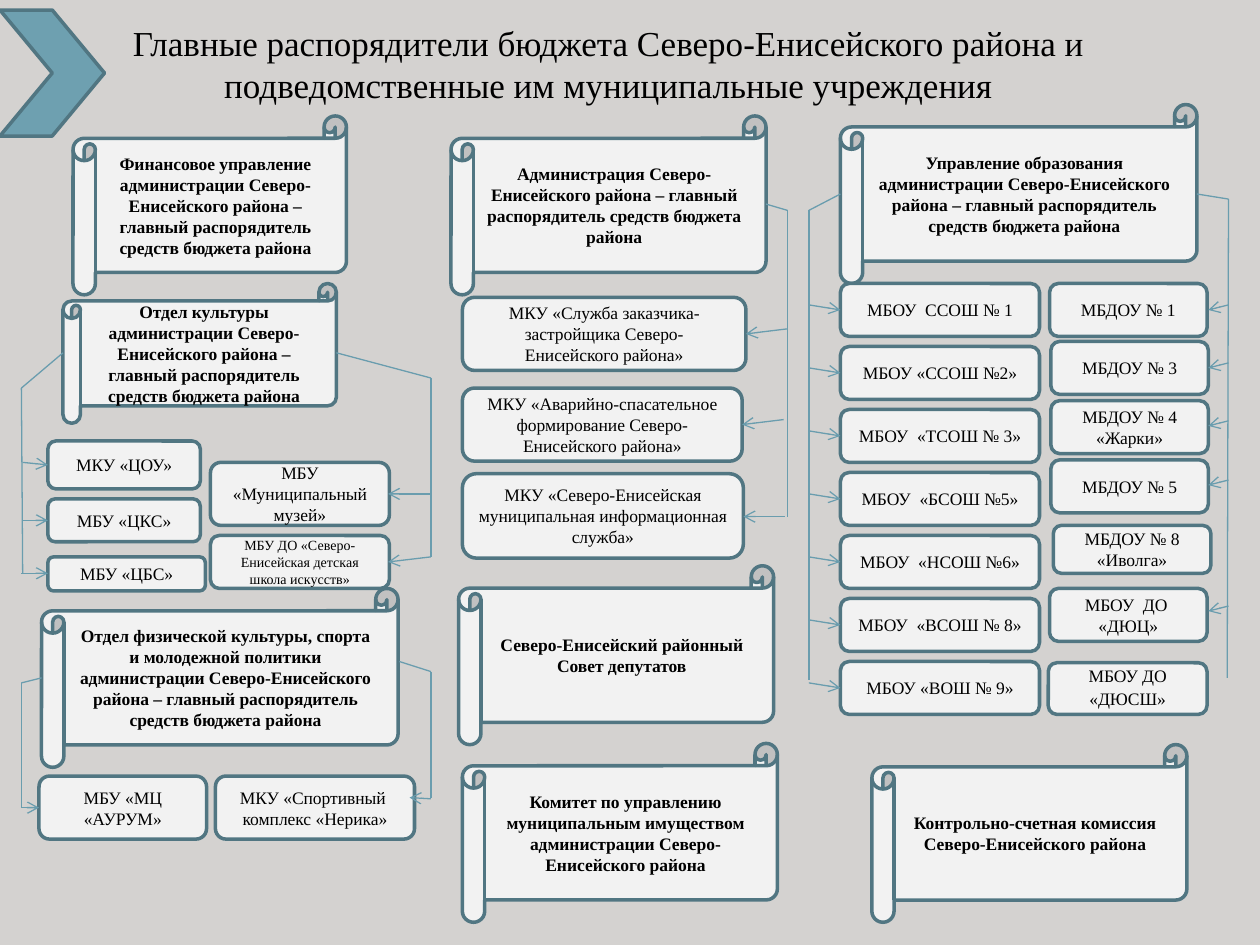
from itertools import pairwise

from lxml import etree
from pptx import Presentation, util as u
from pptx.dml import color
from pptx.enum import shapes, text
from pptx.oxml import ns

PX = 9144
FONT = "Times New Roman"
PAPER, BORDER, RAIL, ACCENT = "F2F2F2", "517682", "6A9DAE", "6EA0B0"
INK, BACKGROUND = "000000", "D4D2D0"
SCROLL = shapes.MSO_SHAPE.HORIZONTAL_SCROLL
ROUNDED = shapes.MSO_SHAPE.ROUNDED_RECTANGLE
CHEVRON = shapes.MSO_SHAPE.CHEVRON
CHIEF = " – главный распорядитель средств бюджета района"


def px(*lengths):
    return [u.Emu(length * PX) for length in lengths]


def rgb(value):
    return color.RGBColor.from_string(value)


def within(box, part):
    left, top, width, height = part
    return box[0] + left, box[1] + top, width, height


def write(shape, words, size, bold=False):
    frame = shape.text_frame
    frame.word_wrap = True
    frame.vertical_anchor = text.MSO_ANCHOR.MIDDLE
    frame.text = words
    for paragraph in frame.paragraphs:
        paragraph.alignment = text.PP_ALIGN.CENTER
        if len(frame.paragraphs) > 1:
            paragraph.line_spacing = 0.9
            paragraph.space_before = u.Pt(2)
        for run in paragraph.runs:
            run.font.name = FONT
            run.font.size = u.Pt(size)
            run.font.bold = bold
            run.font.color.rgb = rgb(INK)


def add_panel(slide, preset, box, fill=PAPER):
    shape = slide.shapes.add_shape(preset, *px(*box))
    shape.shadow.inherit = False
    shape.fill.solid()
    shape.fill.fore_color.rgb = rgb(fill)
    shape.line.color.rgb = rgb(BORDER)
    shape.line.width = u.Pt(2)
    return shape


def add_scroll(slide, box, words):
    write(add_panel(slide, SCROLL, box), words, 10, True)


def add_line(slide, start, end, arrow=False):
    line = slide.shapes.add_connector(shapes.MSO_CONNECTOR.STRAIGHT, *px(*start, *end))
    line.line.color.rgb = rgb(RAIL)
    line.line.width = u.Pt(0.75)
    if arrow:
        etree.SubElement(line.line._get_or_add_ln(), ns.qn("a:tailEnd"), type="arrow")
    etree.SubElement(line._element.spPr, ns.qn("a:effectLst"))


def add_department(slide, box, heading, scroll, units, rails, arrows):
    def point(position):
        return box[0] + position[0], box[1] + position[1]

    add_scroll(slide, within(box, scroll), heading)
    for words, part, size in units:
        write(add_panel(slide, ROUNDED, within(box, part)), words, size)
    for rail in rails:
        for start, end in pairwise(rail):
            add_line(slide, point(start), point(end))
    for start, end in arrows:
        add_line(slide, point(start), point(end), True)


def add_header(slide, box):
    add_panel(slide, CHEVRON, within(box, (0, 0, 83, 100)), ACCENT)
    title = slide.shapes.add_textbox(*px(*within(box, (58, 9, 850, 67))))
    write(title, "Главные распорядители бюджета Северо-Енисейского района "
                 "и подведомственные им муниципальные учреждения", 20)


def add_sport(slide, box):
    units = [
        ("МБУ «МЦ «АУРУМ»", (14, 149, 133, 50), 10),
        ("МКУ «Спортивный  комплекс «Нерика»", (154, 149, 158, 50), 10),
    ]
    rails = [[(16, 71), (0, 75), (0, 174)], [(300, 58), (325, 66), (325, 166)]]
    arrows = [((0, 174), (14, 174)), ((325, 167), (308, 166))]
    add_department(slide, box, "Отдел физической культуры, спорта и молодежной политики "
                   "администрации Северо-Енисейского района" + CHIEF,
                   (16, 0, 283, 142), units, rails, arrows)


def add_culture(slide, box):
    units = [
        ("МКУ «ЦОУ»", (21, 125, 121, 38), 10),
        ("МБУ «ЦКС»", (21, 171, 121, 34), 10),
        ("МБУ «ЦБС»", (21, 217, 125, 27), 10),
        ("МБУ «Муниципальный музей»", (150, 142, 142, 50), 10),
        ("МБУ ДО «Северо-Енисейская детская школа искусств»", (150, 200, 142, 42), 8),
    ]
    rails = [[(33, 55), (0, 83), (1, 230)], [(250, 55), (325, 75), (325, 217)]]
    arrows = [
        ((1, 142), (21, 144)), ((1, 188), (21, 188)), ((0, 230), (21, 230)),
        ((325, 167), (291, 167)), ((325, 217), (291, 221)),
    ]
    add_department(slide, box, "Отдел культуры администрации Северо-Енисейского района" + CHIEF,
                   (33, 0, 217, 111), units, rails, arrows)


def add_administration(slide, box):
    units = [
        ("МКУ «Служба заказчика-застройщика Северо-Енисейского района»",
         (9, 144, 225, 58), 10),
        ("МКУ «Аварийно-спасательное формирование Северо-Енисейского района»",
         (9, 216, 222, 58), 10),
        ("МКУ «Северо-Енисейская муниципальная информационная служба»",
         (9, 284, 223, 67), 10),
    ]
    rails = [[(250, 70), (267, 75), (267, 318)]]
    arrows = [((267, 169), (234, 173)), ((264, 241), (231, 245)), ((265, 318), (232, 318))]
    add_department(slide, box, "Администрация Северо-Енисейского района" + CHIEF,
                   (0, 0, 250, 142), units, rails, arrows)


def add_education(slide, box):
    schools = ["МБОУ  ССОШ № 1", "МБОУ «ССОШ №2»", "МБОУ  «ТСОШ № 3»", "МБОУ  «БСОШ №5»",
               "МБОУ  «НСОШ №6»", "МБОУ  «ВСОШ № 8»", "МБОУ «ВОШ № 9»"]
    kindergartens = [
        ("МБДОУ № 1", (191, 142, 125, 42)),
        ("МБДОУ № 3", (192, 188, 125, 42)),
        ("МБДОУ № 4 «Жарки»", (192, 235, 125, 42)),
        ("МБДОУ № 5", (192, 282, 125, 42)),
        ("МБДОУ № 8 «Иволга»", (194, 334, 125, 38)),
        ("МБОУ  ДО  «ДЮЦ»", (191, 384, 125, 42)),
        ("МБОУ ДО\n«ДЮСШ»", (190, 443, 126, 41)),
    ]
    units = [(words, (25, 142 + 50 * row, 158, 42), 10) for row, words in enumerate(schools)]
    units += [(words, part, 10) for words, part in kindergartens]
    rails = [[(25, 71), (0, 84), (0, 457)], [(308, 71), (333, 75), (332, 455)]]
    arrows = [((0, 159 + 50 * row), (25, 163 + 50 * row)) for row in range(len(schools))]
    arrows += [((333, y), (317, y + 4)) for y in (159, 205, 251, 298, 398)]
    add_department(slide, box, "Управление образования администрации "
                   "Северо-Енисейского района" + CHIEF,
                   (25, 0, 283, 142), units, rails, arrows)


def main():
    presentation = Presentation()
    presentation.slide_width, presentation.slide_height = px(1000, 750)
    slide = presentation.slides.add_slide(presentation.slide_layouts[6])
    slide.background.fill.solid()
    slide.background.fill.fore_color.rgb = rgb(BACKGROUND)
    add_header(slide, (0, 8, 908, 100))
    add_scroll(slide, (58, 92, 217, 142),
               "Финансовое управление администрации Северо-Енисейского района" + CHIEF)
    add_sport(slide, (17, 467, 325, 199))
    add_culture(slide, (17, 225, 325, 244))
    add_administration(slide, (358, 92, 267, 351))
    add_education(slide, (642, 83, 333, 485))
    add_scroll(slide, (364, 449, 250, 142), "Северо-Енисейский районный Совет депутатов")
    add_scroll(slide, (367, 590, 250, 142), "Комитет по управлению муниципальным имуществом "
               "администрации Северо-Енисейского района")
    add_scroll(slide, (692, 591, 250, 141),
               "Контрольно-счетная комиссия Северо-Енисейского района")
    presentation.save("out.pptx")


if __name__ == "__main__":
    main()
